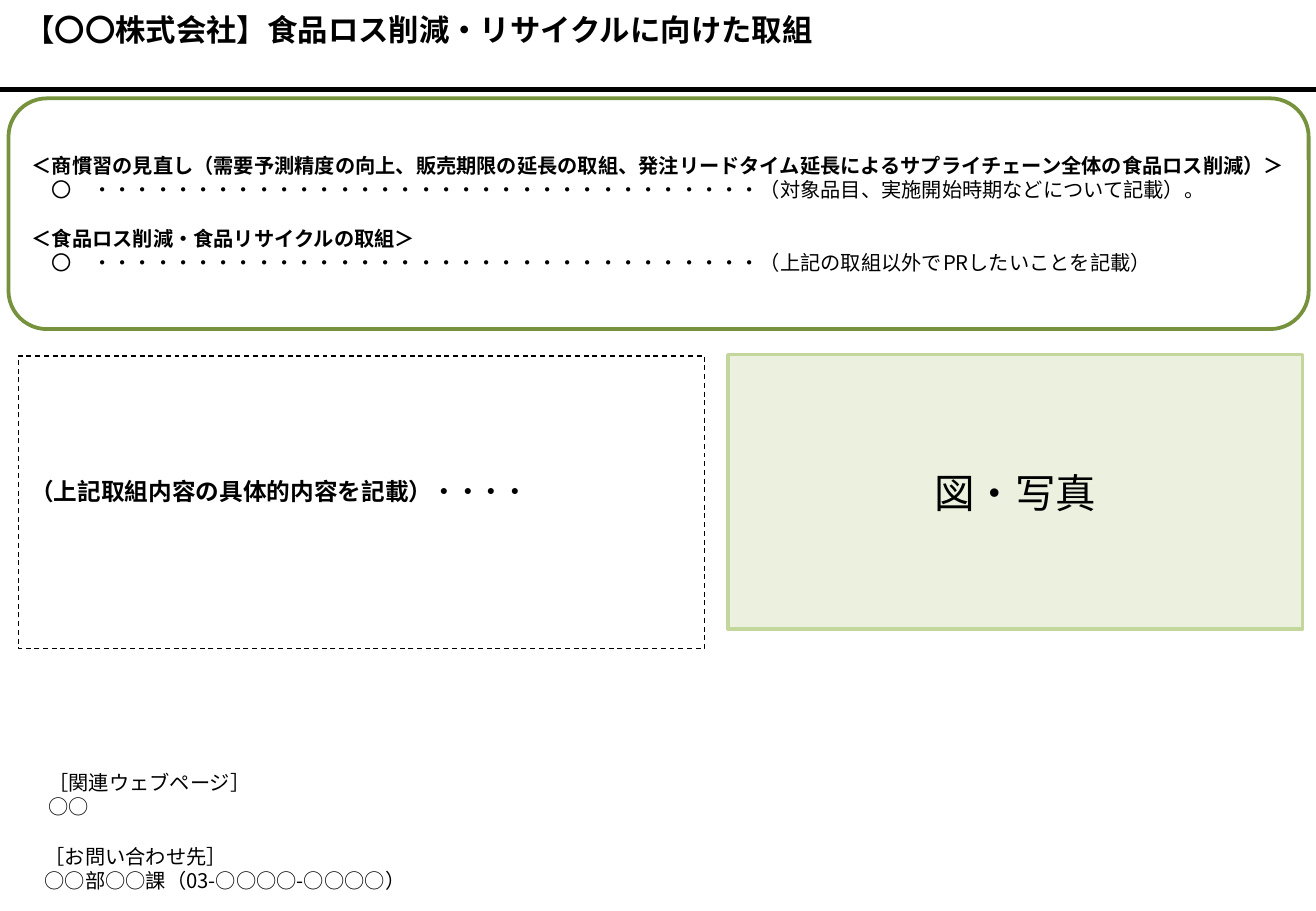
from lxml.etree import SubElement
from pptx import Presentation
from pptx.dml.color import RGBColor
from pptx.enum.dml import MSO_LINE
from pptx.enum.shapes import MSO_CONNECTOR, MSO_SHAPE
from pptx.enum.text import MSO_ANCHOR, MSO_AUTO_SIZE, PP_ALIGN
from pptx.oxml.ns import qn
from pptx.util import Pt

PX = 9144
FONT = "Noto Sans CJK JP"
COLORS = {
    "black": "000000",
    "white": "FFFFFF",
    "dark_green": "76923C",
    "light_green": "C3D69B",
    "pale_green": "EBF1DE",
}
DOTS = "・" * 33


def write(shape, lines, size, anchor=MSO_ANCHOR.MIDDLE, align=PP_ALIGN.LEFT):
    frame = shape.text_frame
    frame.word_wrap = True
    frame.auto_size = MSO_AUTO_SIZE.NONE
    frame.vertical_anchor = anchor
    frame.text = "\n".join(text for text, bold in lines)
    for paragraph, (text, bold) in zip(frame.paragraphs, lines):
        paragraph.alignment = align
        paragraph.line_spacing = Pt(size * 1.2)
        font = paragraph.font
        font.name = FONT
        font.size = Pt(size)
        font.bold = bold
        font.color.rgb = RGBColor.from_string(COLORS["black"])
        latin = paragraph._p.pPr.find(qn("a:defRPr")).find(qn("a:latin"))
        east_asian = SubElement(latin.getparent(), qn("a:ea"), typeface=FONT)
        latin.addnext(east_asian)


def add_panel(kind, box, fill, line, width):
    shape = slide.shapes.add_shape(kind, *[value * PX for value in box])
    shape.shadow.inherit = False
    if fill:
        shape.fill.solid()
        shape.fill.fore_color.rgb = RGBColor.from_string(COLORS[fill])
    else:
        shape.fill.background()
    shape.line.color.rgb = RGBColor.from_string(COLORS[line])
    shape.line.width = Pt(width)
    return shape


presentation = Presentation()
presentation.slide_width = 1083 * PX
presentation.slide_height = 750 * PX
slide = presentation.slides.add_slide(presentation.slide_layouts[5])

title = slide.shapes.title
title.left, title.top, title.width, title.height = [value * PX for value in (10, 4, 761, 40)]
write(title, [("【〇〇株式会社】食品ロス削減・リサイクルに向けた取組", True)], 18)

rule = slide.shapes.add_connector(MSO_CONNECTOR.STRAIGHT, 0, 74 * PX, 1083 * PX, 74 * PX)
rule.line.color.rgb = RGBColor.from_string(COLORS["black"])
rule.line.width = Pt(3)
SubElement(rule._element.spPr, qn("a:effectLst"))

summary = add_panel(MSO_SHAPE.ROUNDED_RECTANGLE, (7, 81, 1070, 190), "white", "dark_green", 2.25)
write(summary, [
    ("＜商慣習の見直し（需要予測精度の向上、販売期限の延長の取組、発注リードタイム延長によるサプライチェーン全体の食品ロス削減）＞", True),
    (f"　〇　{DOTS}（対象品目、実施開始時期などについて記載）。", False),
    ("＜食品ロス削減・食品リサイクルの取組＞", True),
    (f"　〇　{DOTS}（上記の取組以外でPRしたいことを記載）", False),
], 12)
summary.text_frame.paragraphs[2].space_before = Pt(14.4)

photo = add_panel(MSO_SHAPE.RECTANGLE, (599, 292, 473, 226), "pale_green", "light_green", 2)
write(photo, [("図・写真", False)], 24, align=PP_ALIGN.CENTER)

details = add_panel(MSO_SHAPE.RECTANGLE, (15, 293, 565, 241), None, "black", 0.75)
details.line.dash_style = MSO_LINE.DASH
write(details, [("（上記取組内容の具体的内容を記載）・・・・", True)], 14)
details.text_frame.margin_bottom = 24 * PX

for left, top, heading, content in (
    (30, 629, "［関連ウェブページ］", "○○"),
    (27, 690, "［お問い合わせ先］", "○○部○○課（03-○○○○-○○○○）"),
):
    note = slide.shapes.add_textbox(left * PX, top * PX, 728 * PX, 50 * PX)
    write(note, [(heading, False), (content, False)], 12, MSO_ANCHOR.BOTTOM)

presentation.save("out.pptx")
